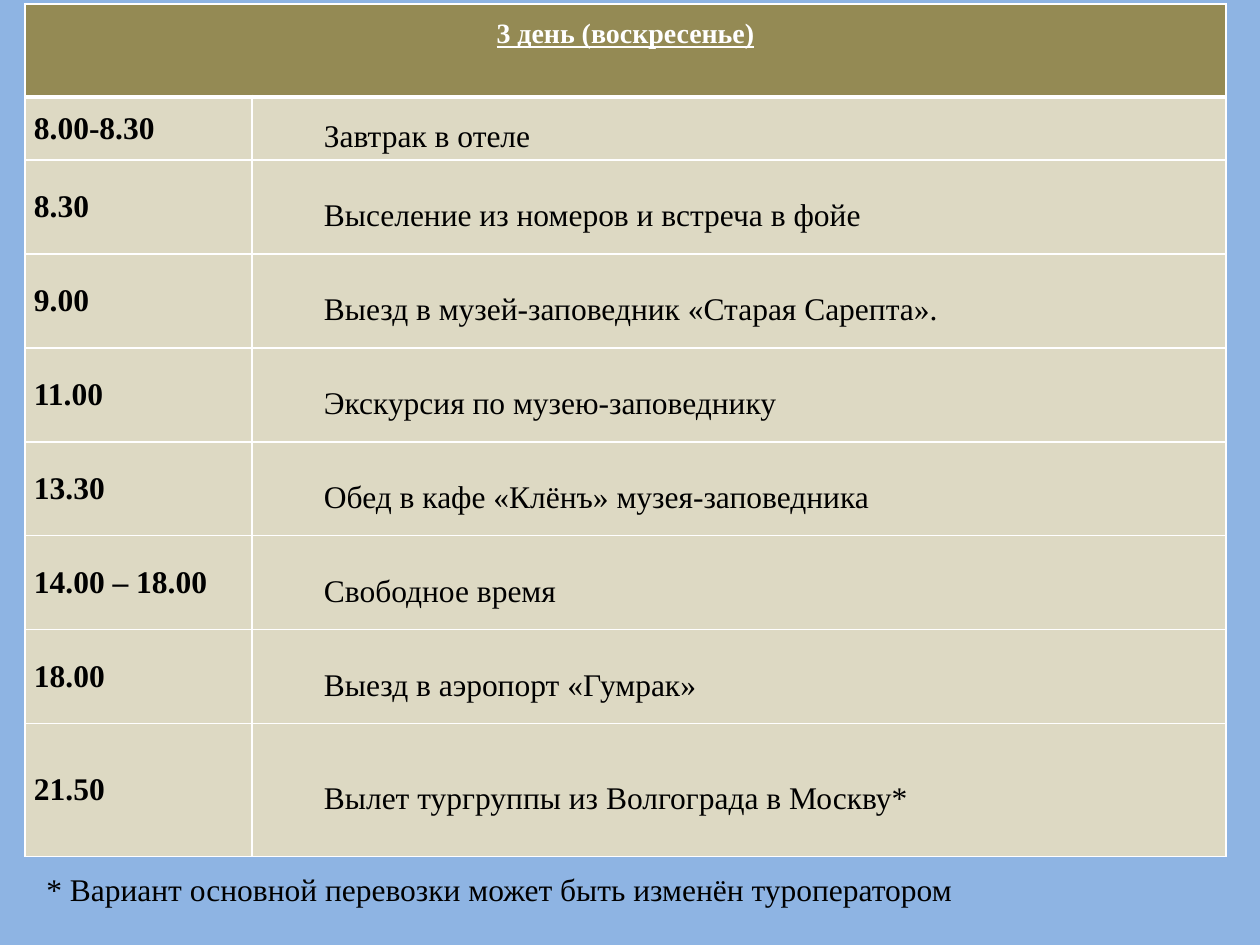
from lxml.etree import SubElement
from pptx import Presentation
from pptx.dml.color import RGBColor
from pptx.enum.text import MSO_ANCHOR as Anchor, PP_ALIGN as Align
from pptx.oxml.ns import qn
from pptx.util import Pt

# Content
TITLE = "3 день (воскресенье)"
SCHEDULE = [
    ("8.00-8.30", "Завтрак в отеле"),
    ("8.30", "Выселение из номеров и встреча в фойе"),
    ("9.00", "Выезд в музей-заповедник «Старая Сарепта»."),
    ("11.00", "Экскурсия по музею-заповеднику"),
    ("13.30", "Обед в кафе «Клёнъ» музея-заповедника"),
    ("14.00 – 18.00", "Свободное время"),
    ("18.00", "Выезд в аэропорт «Гумрак»"),
    ("21.50", "Вылет тургруппы из Волгограда в Москву*"),
]
FOOTNOTE = "* Вариант основной перевозки может быть изменён туроператором"

# Style and layout, lengths in px
COLORS = {"background": "8EB4E3", "header": "948A54", "body": "DDD9C3",
          "border": "FFFFFF", "title": "FFFFFF", "text": "000000"}
FONT = "Times New Roman"
PX = 914400 // 126
TABLE_LEFT, TABLE_TOP = 25, 4
COLUMN_WIDTHS = [227, 974]
ROW_HEIGHTS = [93, 63] + [94] * 6 + [133]
SIDE_MARGIN = 9
ACTIVITY_INDENT = 63
TITLE_BOTTOM_MARGIN = 32


def px(value):
    return round(value * PX)


def color(name):
    return RGBColor.from_string(COLORS[name])


def write(text_frame, text, size, color_name, bold=False, align=Align.LEFT):
    text_frame.text = text
    paragraph = text_frame.paragraphs[0]
    paragraph.alignment = align
    font = paragraph.runs[0].font
    font.name, font.size, font.bold = FONT, Pt(size), bold
    font.color.rgb = color(color_name)
    return paragraph


def style_cell(cell, fill, top=1, bottom=1):
    properties = cell._tc.get_or_add_tcPr()
    for side, width in (("L", 1), ("R", 1), ("T", top), ("B", bottom)):
        line = SubElement(properties, qn(f"a:ln{side}"), w=str(Pt(width)))
        SubElement(SubElement(line, qn("a:solidFill")), qn("a:srgbClr"),
                   val=COLORS["border"])
    cell.fill.solid()
    cell.fill.fore_color.rgb = color(fill)
    cell.vertical_anchor = Anchor.MIDDLE
    cell.margin_left = cell.margin_right = px(SIDE_MARGIN)
    cell.margin_top = cell.margin_bottom = 0


presentation = Presentation()
presentation.slide_width, presentation.slide_height = px(1260), px(945)
slide = presentation.slides.add_slide(presentation.slide_layouts[6])
slide.background.fill.solid()
slide.background.fill.fore_color.rgb = color("background")

# Schedule table
table = slide.shapes.add_table(
    len(ROW_HEIGHTS), len(COLUMN_WIDTHS), px(TABLE_LEFT), px(TABLE_TOP),
    px(sum(COLUMN_WIDTHS)), px(sum(ROW_HEIGHTS))).table
for column, width in zip(table.columns, COLUMN_WIDTHS):
    column.width = px(width)
for row, height in zip(table.rows, ROW_HEIGHTS):
    row.height = px(height)

# Header row
for cell in table.rows[0].cells:
    style_cell(cell, "header", bottom=3)
header = table.cell(0, 0)
header.merge(table.cell(0, 1))
header.margin_bottom = px(TITLE_BOTTOM_MARGIN)
title = write(header.text_frame, TITLE, 16, "title", True, Align.CENTER)
title.runs[0].font.underline = True

# Times and activities
for row_index, (time, activity) in enumerate(SCHEDULE, start=1):
    time_cell, activity_cell = table.rows[row_index].cells
    for cell in (time_cell, activity_cell):
        style_cell(cell, "body", top=3 if row_index == 1 else 1)
    write(time_cell.text_frame, time, 18, "text", True, Align.JUSTIFY)
    paragraph = write(activity_cell.text_frame, activity, 18, "text",
                      align=Align.JUSTIFY)
    paragraph.line_spacing = 1.5
    paragraph._p.get_or_add_pPr().set("indent", str(px(ACTIVITY_INDENT)))

# Footnote
footnote = slide.shapes.add_textbox(px(34), px(864), px(1201), px(50))
footnote.text_frame.word_wrap = True
write(footnote.text_frame, FOOTNOTE, 18, "text")

presentation.save("out.pptx")
